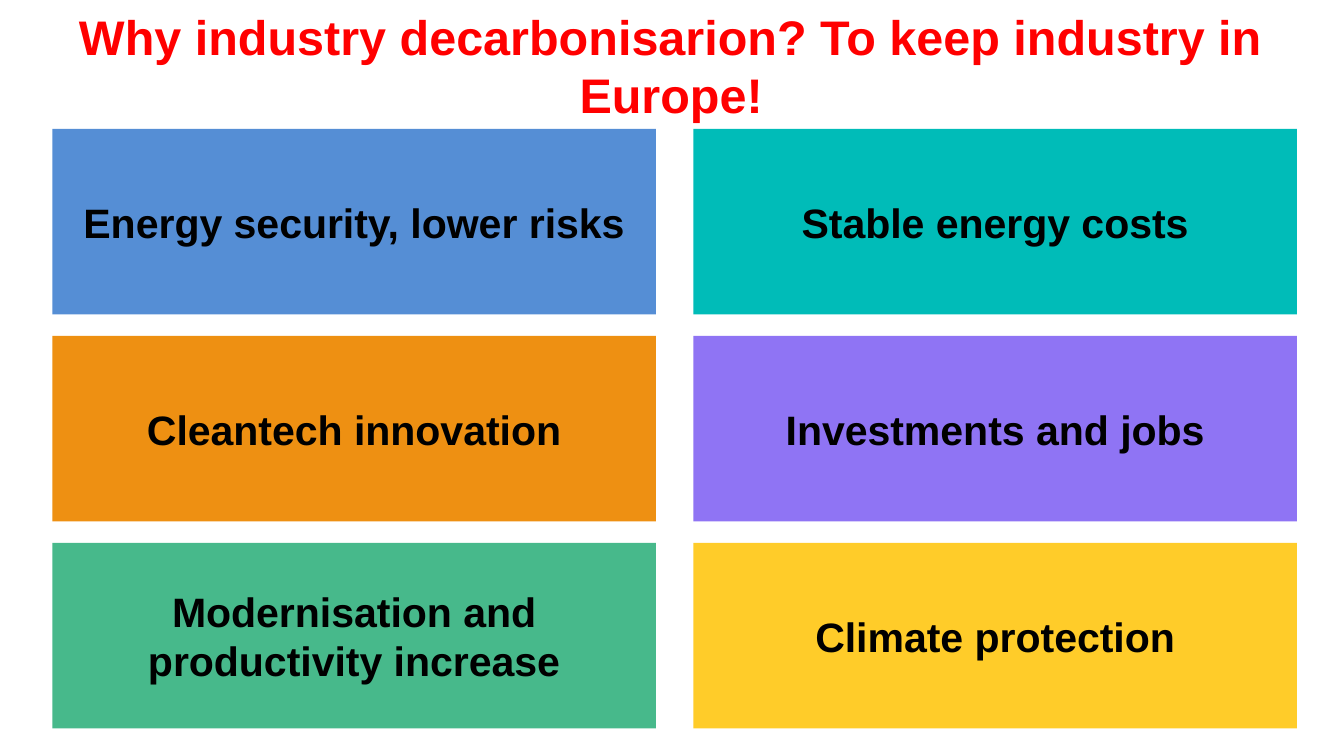
from dataclasses import dataclass

from pptx import Presentation
from pptx import util as u
from pptx.dml.color import RGBColor
from pptx.enum import shapes, text
from pptx.slide import Slide
from pptx.text.text import TextFrame


@dataclass(frozen=True)
class Theme:
    font: str = "Arial"
    title_size: int = 26
    reason_size: int = 22
    title_color: str = "FF0000"
    reason_color: str = "000000"
    blue: str = "558ED5"
    teal: str = "00BCB8"
    orange: str = "EE9012"
    violet: str = "8F74F4"
    green: str = "47B98B"
    yellow: str = "FFCC29"


@dataclass(frozen=True)
class Reason:
    label: str
    fill: str


@dataclass(frozen=True)
class Grid:
    left: float = 0.39
    top: float = 0.96
    width: float = 4.49
    height: float = 1.38
    column_step: float = 4.77
    row_step: float = 1.54
    columns: int = 2


THEME = Theme()
GRID = Grid()
SLIDE_WIDTH = u.Inches(10)
SLIDE_HEIGHT = SLIDE_WIDTH * 9 // 16  # widescreen

# Reasons in reading order, row by row
REASONS = [
    Reason("Energy security, lower risks", THEME.blue),
    Reason("Stable energy costs", THEME.teal),
    Reason("Cleantech innovation", THEME.orange),
    Reason("Investments and jobs", THEME.violet),
    Reason("Modernisation and productivity increase", THEME.green),
    Reason("Climate protection", THEME.yellow),
]


def write_centred(frame: TextFrame, wording: str, size: int, color: str) -> None:
    frame.text = wording
    frame.word_wrap = True
    frame.auto_size = text.MSO_AUTO_SIZE.NONE
    frame.vertical_anchor = text.MSO_ANCHOR.MIDDLE
    paragraph = frame.paragraphs[0]
    paragraph.alignment = text.PP_ALIGN.CENTER
    paragraph.font.name = THEME.font
    paragraph.font.size = u.Pt(size)
    paragraph.font.bold = True
    paragraph.font.color.rgb = RGBColor.from_string(color)


def draw_title(slide: Slide, wording: str) -> None:
    headline = slide.shapes.title
    headline.left, headline.top = u.Inches(0), u.Inches(0.1)
    headline.width, headline.height = u.Inches(9.99), u.Inches(0.77)
    write_centred(headline.text_frame, wording, THEME.title_size, THEME.title_color)


def draw_reason(slide: Slide, reason: Reason, index: int) -> None:
    row, column = divmod(index, GRID.columns)
    tile = slide.shapes.add_shape(
        shapes.MSO_SHAPE.RECTANGLE,
        u.Inches(GRID.left + column * GRID.column_step),
        u.Inches(GRID.top + row * GRID.row_step),
        u.Inches(GRID.width),
        u.Inches(GRID.height),
    )
    tile.shadow.inherit = False
    tile.fill.solid()
    tile.fill.fore_color.rgb = RGBColor.from_string(reason.fill)
    tile.line.fill.background()
    write_centred(tile.text_frame, reason.label, THEME.reason_size, THEME.reason_color)


def main() -> None:
    deck = Presentation()
    deck.slide_width, deck.slide_height = SLIDE_WIDTH, SLIDE_HEIGHT
    title_only = deck.slide_layouts[5]
    slide = deck.slides.add_slide(title_only)

    # Headline
    draw_title(slide, "Why industry decarbonisarion? To keep industry in Europe!")

    # Two-column grid of reasons
    for index, reason in enumerate(REASONS):
        draw_reason(slide, reason, index)

    deck.save("out.pptx")


if __name__ == "__main__":
    main()
